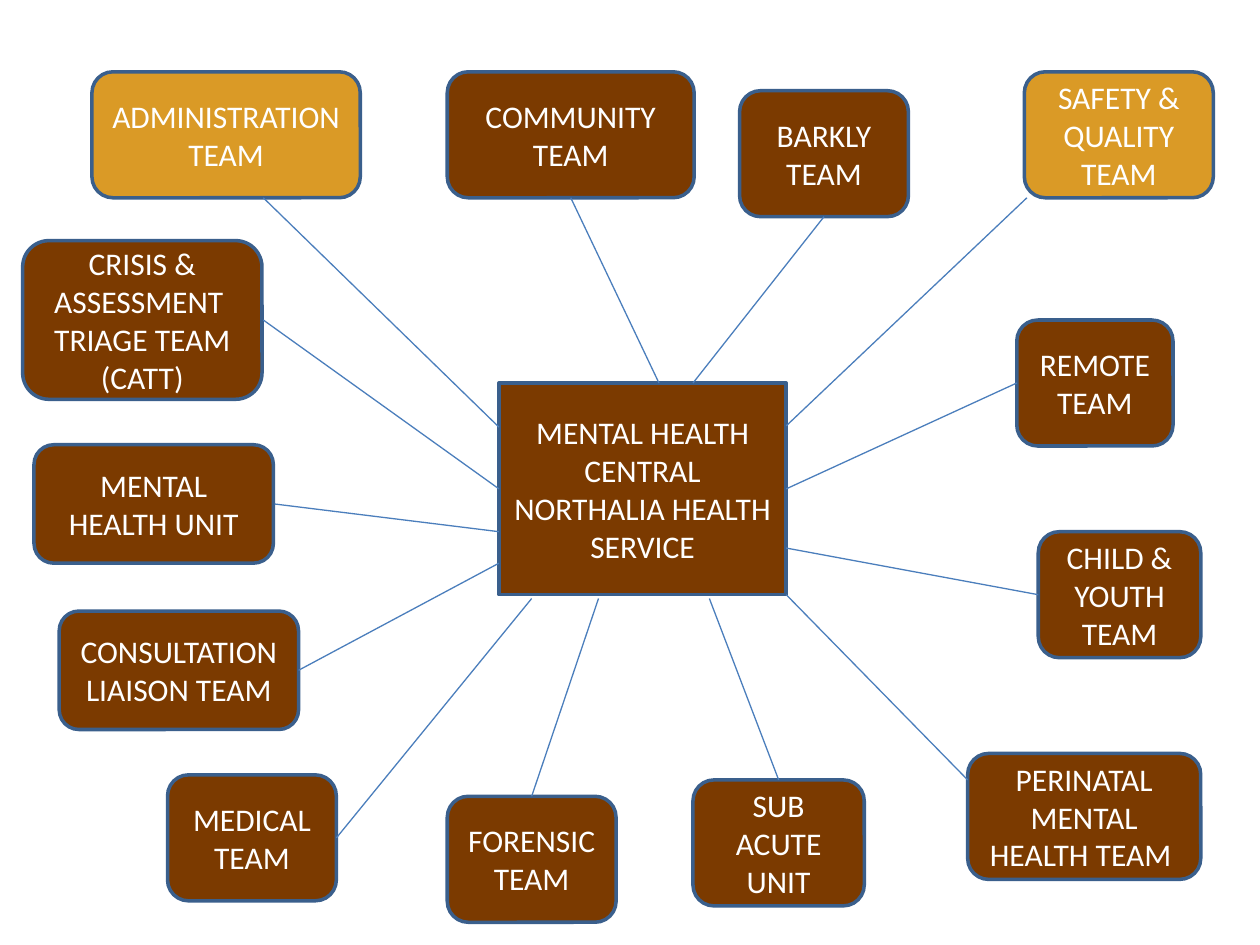
"""Build a hub-and-spoke slide of the teams in a mental health service."""
from typing import NamedTuple

import pptx
import pptx.dml.color
import pptx.enum.shapes
import pptx.enum.text
import pptx.util
from lxml import etree
from pptx.util import Inches

BROWN, GOLD, WHITE = "7B3A00", "DA9A26", "FFFFFF"
OUTLINE, SPOKE = "3A5F8C", "4B7EBC"
SHAPES = pptx.enum.shapes.MSO_SHAPE


class Team(NamedTuple):
    name: str
    left: float
    top: float
    width: float
    spoke_start: tuple[float, float]
    spoke_end: tuple[float, float]
    height: float = 1
    fill: str = BROWN


HUB_LEFT, HUB_TOP, HUB_WIDTH, HUB_HEIGHT = 3.96, 3.04, 2.28, 1.68
HUB_RIGHT, HUB_BOTTOM = HUB_LEFT + HUB_WIDTH, HUB_TOP + HUB_HEIGHT
BELOW_HUB = HUB_BOTTOM + 0.03
HUB_TEXT = "MENTAL HEALTH\nCENTRAL NORTHALIA HEALTH SERVICE"

TEAMS = [
    Team("ADMINISTRATION TEAM", 0.73, 0.57, 2.13, (2.09, 1.57), (HUB_LEFT, 3.39), fill=GOLD),
    Team("COMMUNITY TEAM", 3.55, 0.57, 1.96, (4.53, 1.57), (5.23, HUB_TOP)),
    Team("BARKLY TEAM", 5.87, 0.72, 1.34, (6.54, 1.72), (5.5, HUB_TOP)),
    Team("SAFETY & QUALITY TEAM", 8.13, 0.57, 1.5, (8.15, 1.57), (HUB_RIGHT, 3.38), fill=GOLD),
    Team("REMOTE TEAM", 8.07, 2.54, 1.24, (8.07, 3.04), (HUB_RIGHT, 3.88)),
    Team("CHILD & YOUTH TEAM", 8.24, 4.22, 1.29, (8.24, 4.72), (HUB_RIGHT, 4.35)),
    Team("PERINATAL MENTAL HEALTH TEAM ", 7.68, 5.98, 1.85, (7.68, 6.19), (HUB_RIGHT, HUB_BOTTOM)),
    Team("SUB ACUTE UNIT", 5.5, 6.19, 1.36, (6.18, 6.19), (5.63, BELOW_HUB)),
    Team("FORENSIC TEAM", 3.55, 6.32, 1.34, (4.22, 6.32), (4.75, BELOW_HUB)),
    Team("MEDICAL TEAM", 1.33, 6.15, 1.34, (2.67, 6.65), (4.22, BELOW_HUB)),
    Team("CONSULTATION LIAISON TEAM", 0.47, 4.85, 1.9, (2.37, 5.32), (HUB_LEFT, 4.47), 0.94),
    Team("MENTAL HEALTH UNIT", 0.27, 3.53, 1.9, (2.18, 4), (HUB_LEFT, 4.22), 0.94),
    Team("CRISIS & ASSESSMENT  TRIAGE TEAM (CATT)", 0.18, 1.91, 1.9, (2.09, 2.54), (HUB_LEFT, 3.88), 1.26),
]


def colour(hex_code: str) -> pptx.dml.color.RGBColor:
    return pptx.dml.color.RGBColor.from_string(hex_code)


def write_text(frame, text: str, *, size: float = 18, font: str = "Calibri", ink: str = WHITE) -> None:
    frame.word_wrap = True
    frame.vertical_anchor = pptx.enum.text.MSO_ANCHOR.MIDDLE
    frame.text = text
    for paragraph in frame.paragraphs:
        paragraph.alignment = pptx.enum.text.PP_ALIGN.CENTER
        for run in paragraph.runs:
            run.font.size = pptx.util.Pt(size)
            run.font.name = font
            run.font.color.rgb = colour(ink)


def draw_box(slide, kind, text: str, left: float, top: float, width: float, height: float, fill: str) -> None:
    box = slide.shapes.add_shape(kind, Inches(left), Inches(top), Inches(width), Inches(height))
    box.shadow.inherit = False
    box.fill.solid()
    box.fill.fore_color.rgb = colour(fill)
    box.line.color.rgb = colour(OUTLINE)
    box.line.width = pptx.util.Pt(2)
    write_text(box.text_frame, text)


def draw_spoke(slide, start: tuple[float, float], end: tuple[float, float]) -> None:
    spoke = slide.shapes.add_connector(
        pptx.enum.shapes.MSO_CONNECTOR.STRAIGHT, *map(Inches, start + end))
    spoke.line.color.rgb = colour(SPOKE)
    spoke.line.width = pptx.util.Pt(0.75)
    etree.SubElement(spoke._element.spPr, pptx.oxml.ns.qn("a:effectLst"))


def main() -> None:
    deck = pptx.Presentation()
    deck.slide_width, deck.slide_height = Inches(10), Inches(7.5)
    slide = deck.slides.add_slide(deck.slide_layouts[6])
    draw_box(slide, SHAPES.RECTANGLE, HUB_TEXT, HUB_LEFT, HUB_TOP, HUB_WIDTH, HUB_HEIGHT, BROWN)
    for team in TEAMS:
        draw_box(slide, SHAPES.ROUNDED_RECTANGLE, team.name,
                 team.left, team.top, team.width, team.height, team.fill)
        draw_spoke(slide, team.spoke_start, team.spoke_end)
    deck.save("out.pptx")


if __name__ == "__main__":
    main()
